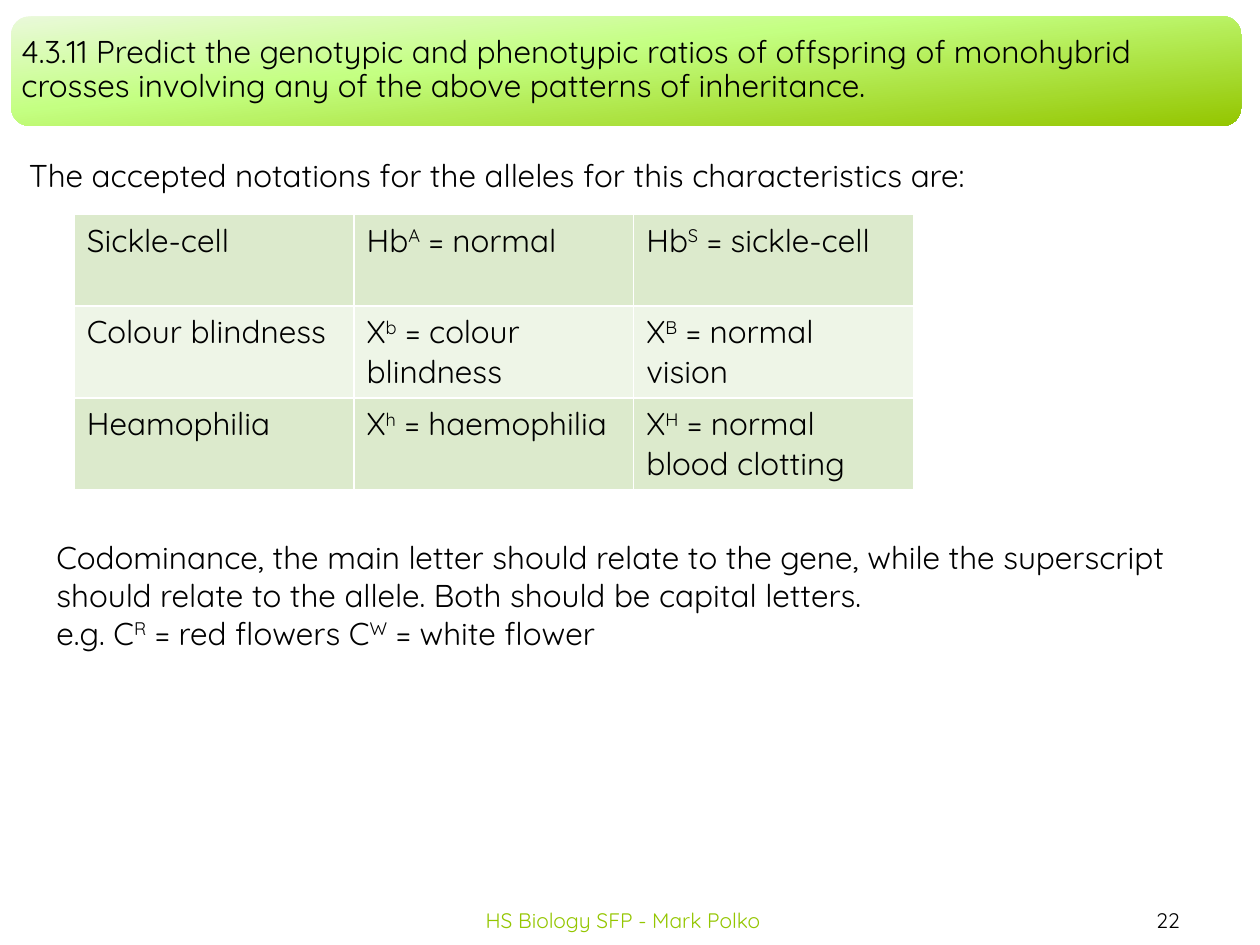
from lxml import etree
from pptx import Presentation
from pptx.dml.color import RGBColor
from pptx.enum import shapes, text
from pptx.oxml import ns
from pptx.util import Inches, Pt

FONT = "Quicksand"
COLORS = {
    "ink": "000000",
    "footer": "94C600",
    "border": "FFFFFF",
    "band_dark": "DCEACC",
    "band_light": "EEF5E7",
}
BANNER_STOPS = [(0, "EAF9DA"), (40, "C4FF82"), (100, "94C600")]

# A tuple of pieces alternates normal text and superscript
ALLELES = [
    [("Sickle-cell",), ("Hb", "A", " = normal"), ("Hb", "S", " = sickle-cell")],
    [("Colour blindness",), ("X", "b", " = colour blindness"), ("X", "B", " = normal vision")],
    [("Heamophilia",), ("X", "h", " = haemophilia"), ("X", "H", " = normal blood clotting")],
]
CODOMINANCE = [
    ("Codominance, the main letter should relate to the gene, while the superscript "
     "should relate to the allele. Both should be capital letters.",),
    ("e.g. C", "R", " = red flowers C", "W", " = white flower"),
]


def add_pieces(paragraph, pieces, size=18, color="ink"):
    for i, piece in enumerate(pieces):
        run = paragraph.add_run()
        run.text = piece
        run.font.name = FONT
        run.font.size = Pt(size)
        run.font.color.rgb = RGBColor.from_string(COLORS[color])
        if i % 2:
            run.font._element.set("baseline", "30000")


def add_text(slide, box, lines, size=18, color="ink", align=text.PP_ALIGN.LEFT,
             anchor=text.MSO_ANCHOR.TOP, side_inset=0.1, spacing=None):
    frame = slide.shapes.add_textbox(*map(Inches, box)).text_frame
    frame.word_wrap = True
    frame.vertical_anchor = anchor
    frame.margin_left = frame.margin_right = Inches(side_inset)
    for i, pieces in enumerate(lines):
        paragraph = frame.add_paragraph() if i else frame.paragraphs[0]
        paragraph.alignment = align
        if spacing:
            paragraph.line_spacing = spacing
        add_pieces(paragraph, pieces, size, color)


def add_banner(slide, box):
    banner = slide.shapes.add_shape(shapes.MSO_SHAPE.ROUNDED_RECTANGLE, *map(Inches, box))
    banner.shadow.inherit = False
    banner.line.fill.background()
    banner.fill.gradient()
    gradient = banner.fill._xPr.find(ns.qn("a:gradFill"))
    stops = gradient.find(ns.qn("a:gsLst"))
    for stop in list(stops):
        stops.remove(stop)
    for position, color in BANNER_STOPS:
        stop = etree.SubElement(stops, ns.qn("a:gs"), pos=str(position * 1000))
        etree.SubElement(stop, ns.qn("a:srgbClr"), val=color)
    direction = gradient.find(ns.qn("a:lin"))
    direction.set("ang", str(84 * 60000))
    direction.set("scaled", "0")


def add_borders(cell):
    properties = cell._tc.get_or_add_tcPr()
    for i, side in enumerate(("lnL", "lnR", "lnT", "lnB")):
        line = etree.Element(ns.qn(f"a:{side}"), w=str(Pt(1)))
        fill = etree.SubElement(line, ns.qn("a:solidFill"))
        etree.SubElement(fill, ns.qn("a:srgbClr"), val=COLORS["border"])
        properties.insert(i, line)


def add_allele_table(slide, left, top, column_width, row_height):
    rows, columns = len(ALLELES), len(ALLELES[0])
    table = slide.shapes.add_table(
        rows, columns, Inches(left), Inches(top),
        Inches(column_width * columns), Inches(row_height * rows)).table
    for r, row in enumerate(ALLELES):
        for c, pieces in enumerate(row):
            cell = table.cell(r, c)
            cell.fill.solid()
            band = "band_light" if r % 2 else "band_dark"
            cell.fill.fore_color.rgb = RGBColor.from_string(COLORS[band])
            add_borders(cell)
            add_pieces(cell.text_frame.paragraphs[0], pieces)


def main():
    prs = Presentation()
    prs.slide_width, prs.slide_height = Inches(10), Inches(7.5)
    slide = prs.slides.add_slide(prs.slide_layouts[6])
    middle, center = text.MSO_ANCHOR.MIDDLE, text.PP_ALIGN.CENTER

    # Footer and slide number
    add_text(slide, (8.54, 7.1, 1.46, 0.4), [("22",)], 12, align=center, anchor=middle)
    add_text(slide, (3.03, 7.1, 3.83, 0.4), [("HS Biology SFP - Mark Polko",)], 12,
             "footer", center, middle)

    # Allele notations
    add_allele_table(slide, 0.59, 1.7, 2.22, 0.73)
    add_text(slide, (0.13, 1.19, 9.09, 0.4),
             [("The accepted notations for the alleles for this characteristics are:",)])

    # Heading banner
    add_banner(slide, (0.09, 0.13, 9.76, 0.87))
    add_text(slide, (0.12, 0.17, 9.71, 0.78),
             [("4.3.11 Predict the genotypic and phenotypic ratios of offspring of monohybrid "
               "crosses involving any of the above patterns of inheritance.",)],
             anchor=middle, side_inset=0.05, spacing=0.9)

    # Codominance rule
    add_text(slide, (0.35, 4.22, 9.06, 1.01), CODOMINANCE)

    prs.save("out.pptx")


if __name__ == "__main__":
    main()
